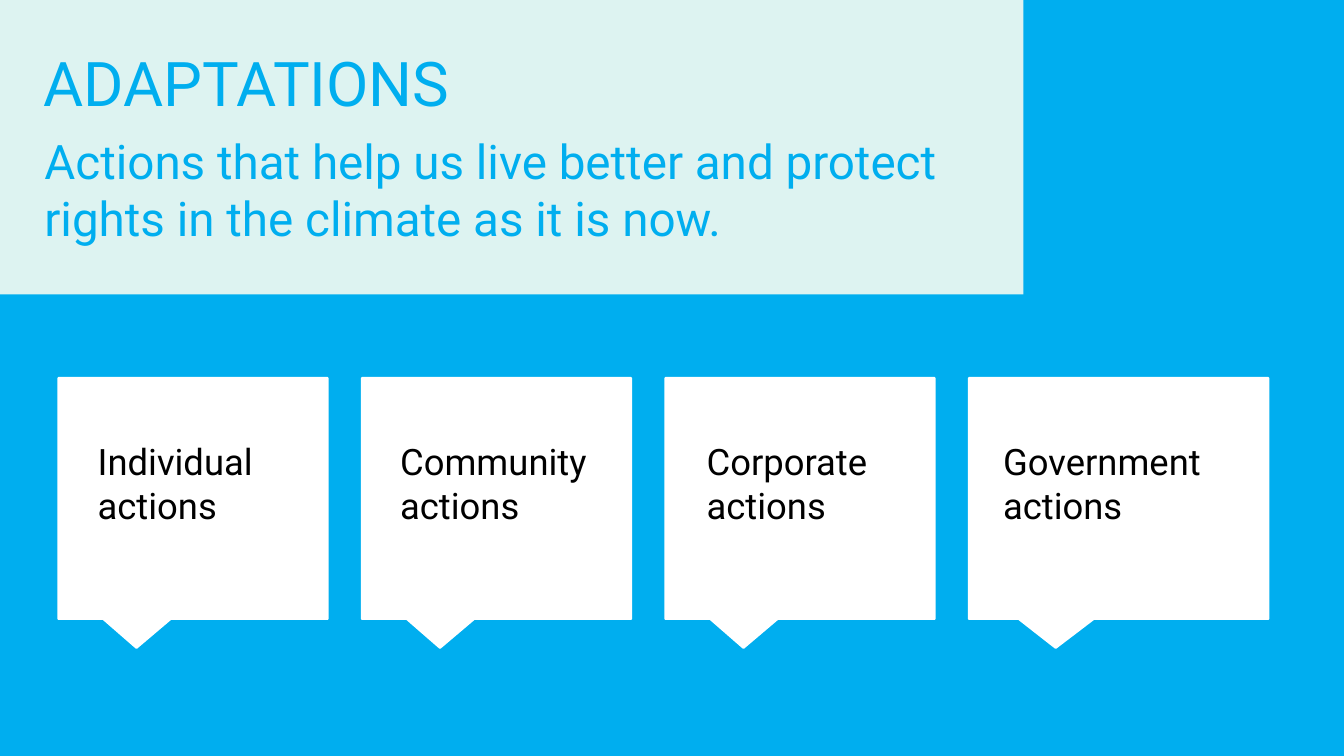
from dataclasses import dataclass

from pptx import Presentation
from pptx.dml.color import RGBColor
from pptx.enum.shapes import MSO_SHAPE
from pptx.enum.text import MSO_ANCHOR, MSO_AUTO_SIZE, PP_ALIGN
from pptx.util import Emu, Pt

RECT = MSO_SHAPE.RECTANGLE
CALLOUT = MSO_SHAPE.ROUNDED_RECTANGULAR_CALLOUT
LEFT = PP_ALIGN.LEFT
TOP = MSO_ANCHOR.TOP
NO_FIT = MSO_AUTO_SIZE.NONE

PX = 9144  # 100 px to the inch


@dataclass(frozen=True)
class Theme:
    font: str = "Roboto"
    blue: RGBColor = RGBColor(0x00, 0xAE, 0xEF)
    mint: RGBColor = RGBColor(0xDD, 0xF3, 0xF1)
    white: RGBColor = RGBColor(0xFF, 0xFF, 0xFF)
    black: RGBColor = RGBColor(0x00, 0x00, 0x00)
    title: int = 44
    lead: int = 34
    label: int = 26


THEME = Theme()

# Label, label left, label width, card width
CARDS = [
    ("Individual actions", 87, 205, 267),
    ("Community actions", 387, 228, 267),
    ("Corporate \vactions", 691, 212, 267),
    ("Government actions", 985, 242, 297),
]
CARD_LEFT, CARD_TOP, CARD_HIGH, CARD_STEP = 58, 375, 239, 301
LABEL_TOP, LABEL_HIGH = 426, 108


def px(*nums):
    return [Emu(num * PX) for num in nums]


def place(shape, *box):
    shape.left, shape.top, shape.width, shape.height = px(*box)


def write(shape, text, size, color, spacing=1.0):
    frame = shape.text_frame
    frame.text = text
    frame.word_wrap = True
    frame.auto_size = NO_FIT
    frame.vertical_anchor = TOP
    frame.margin_left, frame.margin_top, frame.margin_right, frame.margin_bottom = px(10, 10, 10, 10)
    for para in frame.paragraphs:
        para.alignment = LEFT
        para.line_spacing = spacing
        para.space_before = Pt(0)
        for run in para.runs:
            run.font.name = THEME.font
            run.font.size = Pt(size)
            run.font.color.rgb = color


def add_panel(slide, *box):
    panel = slide.shapes.add_shape(RECT, *px(*box))
    panel.shadow.inherit = False
    panel.fill.solid()
    panel.fill.fore_color.rgb = THEME.mint
    panel.line.fill.background()
    # Send behind the title and the lead
    slide.shapes._spTree.insert(2, panel._element)


def add_card(slide, *box):
    card = slide.shapes.add_shape(CALLOUT, *px(*box))
    card.shadow.inherit = False
    card.fill.solid()
    card.fill.fore_color.rgb = THEME.white
    card.line.color.rgb = THEME.white
    card.line.width = Pt(1.5)
    for spot, value in enumerate((-0.21, 0.62, 0)):
        card.adjustments[spot] = value


def add_label(slide, text, *box):
    label = slide.shapes.add_textbox(*px(*box))
    write(label, text, THEME.label, THEME.black)


def main():
    deck = Presentation()
    deck.slide_width, deck.slide_height = px(1333, 750)
    slide = deck.slides.add_slide(deck.slide_layouts[0])
    slide.background.fill.solid()
    slide.background.fill.fore_color.rgb = THEME.blue

    # Heading
    add_panel(slide, 0, 0, 1015, 292)
    title, lead = slide.placeholders
    place(title, 33, 43, 835, 87)
    write(title, "ADAPTATIONS", THEME.title, THEME.blue, 0.9)
    place(lead, 34, 121, 1007, 138)
    write(lead, "Actions that help us live better and protect rights in the climate as it is now.",
          THEME.lead, THEME.blue)

    # Cards
    for spot, (text, left, wide, card_wide) in enumerate(CARDS):
        add_card(slide, CARD_LEFT + spot * CARD_STEP, CARD_TOP, card_wide, CARD_HIGH)
        add_label(slide, text, left, LABEL_TOP, wide, LABEL_HIGH)

    deck.save("out.pptx")


if __name__ == "__main__":
    main()
